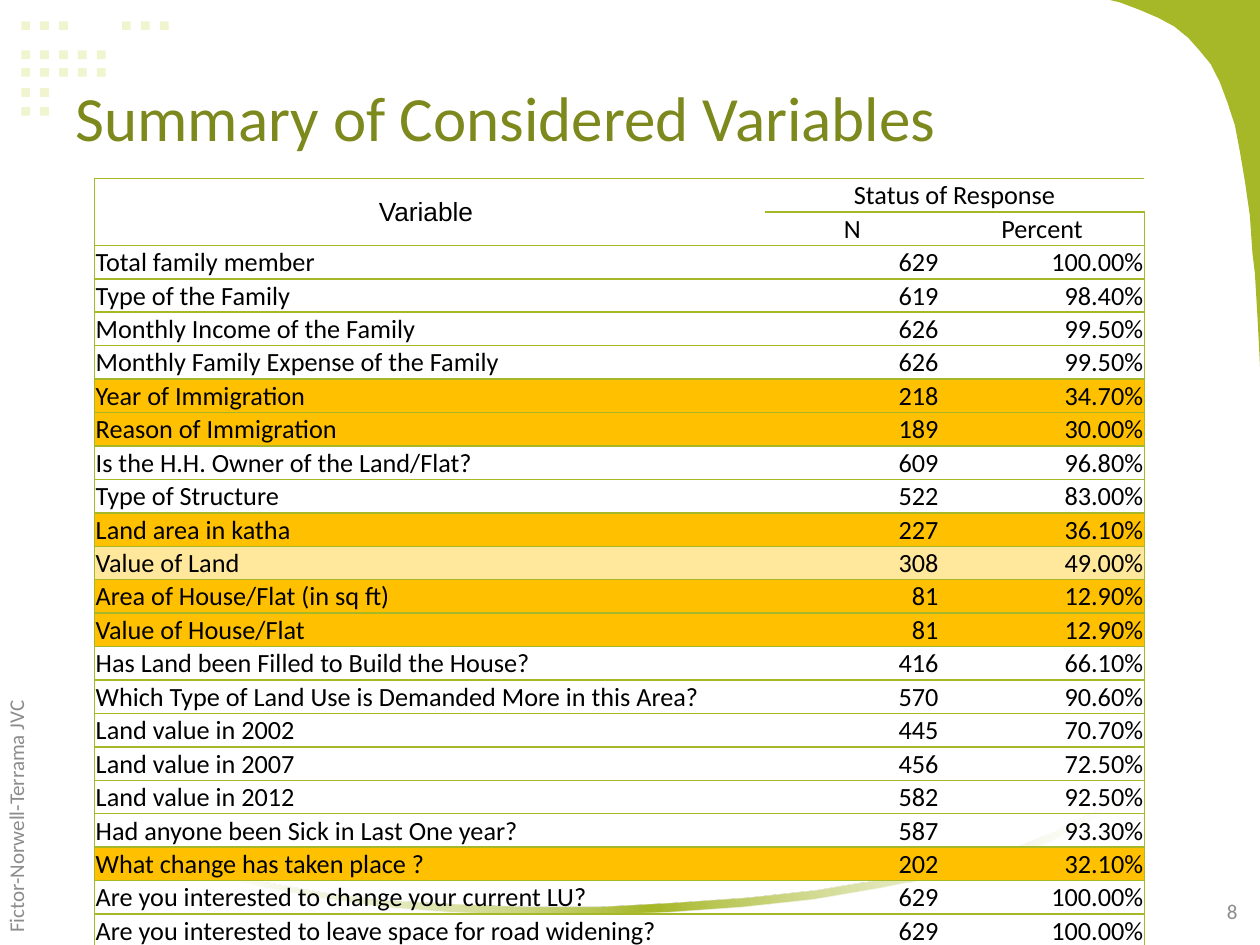
from pptx import Presentation
from pptx.dml.color import RGBColor
from pptx.enum.shapes import MSO_SHAPE
from pptx.enum.text import MSO_ANCHOR, PP_ALIGN
from pptx.oxml import parse_xml
from pptx.oxml.ns import nsdecls, qn
from pptx.util import Pt

GREEN = RGBColor(0xA6, 0xB7, 0x27)
PALE_GREEN = RGBColor(0xF0, 0xF5, 0xD0)
TITLE_GREEN = RGBColor(0x7D, 0x89, 0x1D)
ORANGE = RGBColor(0xFF, 0xC0, 0x00)
PALE_ORANGE = RGBColor(0xFF, 0xE7, 0x9B)
BLACK = RGBColor(0x00, 0x00, 0x00)
GREY = RGBColor(0x8C, 0x8C, 0x8C)

NO_STYLE_NO_GRID = "{2D5ABB26-0587-4C30-8999-92F81FD0307C}"
COLUMN_WIDTHS = (383, 100, 117)

# Label, count, percent, highlight
ROWS = [
    ("Total family member", 629, 100.0, None),
    ("Type of the Family", 619, 98.4, None),
    ("Monthly Income of the Family", 626, 99.5, None),
    ("Monthly Family Expense of the Family", 626, 99.5, None),
    ("Year of Immigration", 218, 34.7, ORANGE),
    ("Reason of Immigration", 189, 30.0, ORANGE),
    ("Is the H.H. Owner of the Land/Flat?", 609, 96.8, None),
    ("Type of Structure", 522, 83.0, None),
    ("Land area in katha", 227, 36.1, ORANGE),
    ("Value of Land", 308, 49.0, PALE_ORANGE),
    ("Area of House/Flat (in sq ft)", 81, 12.9, ORANGE),
    ("Value of House/Flat", 81, 12.9, ORANGE),
    ("Has Land been Filled to Build the House?", 416, 66.1, None),
    ("Which Type of Land Use is Demanded More in this Area?", 570, 90.6, None),
    ("Land value in 2002", 445, 70.7, None),
    ("Land value in 2007", 456, 72.5, None),
    ("Land value in 2012", 582, 92.5, None),
    ("Had anyone been Sick in Last One year?", 587, 93.3, None),
    ("What change has taken place ?", 202, 32.1, ORANGE),
    ("Are you interested to change your current LU?", 629, 100.0, None),
    ("Are you interested to leave space for road widening?", 629, 100.0, None),
]

# Top of each row of dots, with the columns that are filled
DOT_PITCH = 10.8
DOT_ROWS = [
    (12.2, (0, 1, 2, 5.33, 6.33, 7.33)),
    (28.8, range(5)),
    (38.9, range(5)),
    (50.4, range(2)),
    (61.2, range(2)),
]

CORNER = [
    (634.3, 0), (720, 0), (720, 209.5), (719.3, 195.1), (718.6, 181.4),
    (717.1, 156.2), (715.7, 144.7), (714.2, 123.1), (711.4, 103.7),
    (708.5, 86.4), (705.6, 71.3), (701.3, 58.3), (697, 46.8), (691.9, 36.7),
    (685.4, 28.8), (679, 21.6), (671, 15.1), (661.7, 10.1), (651.6, 5.8),
    (640.1, 1.4),
]
SWOOSH = [
    # Lower edge, right to left
    (642.2, 450), (642.2, 455), (624.2, 468), (601.2, 480.2), (572.4, 491),
    (540, 499.7), (504, 506.9), (465.1, 513.4), (424.1, 517.7),
    (382.3, 520.6), (339.8, 522), (298.1, 522), (257, 520.6), (218.9, 517.7),
    (183.6, 512.6), (151.2, 506.9), (123.8, 499.7), (102.2, 491),
    # Upper edge, left to right
    (102.2, 488.9), (124.6, 497.5), (152.6, 504), (185, 509.8),
    (221, 514.1), (259.9, 516.2), (300.2, 517.7), (342.7, 517.7),
    (384.5, 515.5), (427, 512.6), (467.3, 508.3), (506.2, 501.8),
    (542.2, 494.6), (574.6, 486), (602.6, 475.2), (625, 463.7),
]


def paint(shape, color):
    shape.shadow.inherit = False
    shape.fill.solid()
    shape.fill.fore_color.rgb = color
    shape.line.fill.background()


def style_text(paragraph, size, color, font="Calibri", align=PP_ALIGN.LEFT):
    paragraph.alignment = align
    for run in paragraph.runs:
        run.font.name = font
        run.font.size = Pt(size)
        run.font.color.rgb = color


def add_dots(slide):
    for top, columns in DOT_ROWS:
        for column in columns:
            dot = slide.shapes.add_shape(
                MSO_SHAPE.RECTANGLE, Pt(12.2 + column * DOT_PITCH), Pt(top), Pt(5), Pt(5))
            paint(dot, PALE_GREEN)


def add_outline(slide, points):
    start, *rest = [(Pt(x), Pt(y)) for x, y in points]
    builder = slide.shapes.build_freeform(*start)
    builder.add_line_segments(rest, close=True)
    shape = builder.convert_to_shape()
    paint(shape, GREEN)
    return shape


def fade_ends(shape):
    """Fade the fill to translucent white at the left and right ends."""
    shape.fill.gradient()
    shape.fill.gradient_angle = 0
    faded = '<a:srgbClr val="FFFFFF"><a:alpha val="30000"/></a:srgbClr>'
    stops = parse_xml(
        f'<a:gsLst {nsdecls("a")}><a:gs pos="0">{faded}</a:gs>'
        f'<a:gs pos="50000"><a:srgbClr val="{GREEN}"/></a:gs>'
        f'<a:gs pos="100000">{faded}</a:gs></a:gsLst>')
    old_stops = shape.element.spPr.find(qn("a:gradFill")).find(qn("a:gsLst"))
    old_stops.getparent().replace(old_stops, stops)


def set_title(slide, text):
    title = slide.shapes.title
    title.left, title.top, title.width, title.height = Pt(36), Pt(21.6), Pt(648), Pt(90)
    title.text_frame.text = text
    title.text_frame.vertical_anchor = MSO_ANCHOR.MIDDLE
    style_text(title.text_frame.paragraphs[0], 36, TITLE_GREEN)
    slide.shapes.element.append(title.element)  # in front of the decoration


def add_borders(cell, sides):
    properties = cell._tc.get_or_add_tcPr()
    for side in sides:
        properties.append(parse_xml(
            f'<a:ln{side} {nsdecls("a")} w="12700"><a:solidFill>'
            f'<a:srgbClr val="{GREEN}"/></a:solidFill></a:ln{side}>'))


def fill_cell(cell, text, align, highlight=None, font="Calibri", anchor=MSO_ANCHOR.BOTTOM):
    cell.text_frame.text = text
    style_text(cell.text_frame.paragraphs[0], 15, BLACK, font, align)
    cell.vertical_anchor = anchor
    cell.margin_left = cell.margin_right = cell.margin_top = Pt(0.72)
    cell.margin_bottom = 0
    if highlight:
        cell.fill.solid()
        cell.fill.fore_color.rgb = highlight
    else:
        cell.fill.background()


def add_variable_table(slide):
    frame = slide.shapes.add_table(
        len(ROWS) + 2, 3, Pt(54), Pt(102), Pt(600), Pt(431.25))
    table = frame.table
    table.first_row = table.horz_banding = False
    table._tbl.tblPr.find(qn("a:tableStyleId")).text = NO_STYLE_NO_GRID
    for column, width in zip(table.columns, COLUMN_WIDTHS):
        column.width = Pt(width)
    for row in table.rows:
        for cell, sides in zip(row.cells, ("LTB", "TB", "RTB")):
            add_borders(cell, sides)

    # Two header rows
    table.cell(0, 0).merge(table.cell(1, 0))
    table.cell(0, 1).merge(table.cell(0, 2))
    fill_cell(table.cell(0, 0), "Variable ", PP_ALIGN.CENTER,
              font="Arial", anchor=MSO_ANCHOR.MIDDLE)
    fill_cell(table.cell(0, 1), "Status of Response", PP_ALIGN.CENTER)
    for column, text in enumerate(("N", "Percent"), start=1):
        fill_cell(table.cell(1, column), text, PP_ALIGN.CENTER)

    # One row per variable
    for row, (label, count, percent, highlight) in enumerate(ROWS, start=2):
        fill_cell(table.cell(row, 0), label, PP_ALIGN.LEFT, highlight)
        for column, text in enumerate((str(count), f"{percent:.2f}%"), start=1):
            fill_cell(table.cell(row, column), text, PP_ALIGN.RIGHT, highlight)


def add_footer_text(slide, text, left, top, width, height, align, rotation=0):
    box = slide.shapes.add_textbox(Pt(left), Pt(top), Pt(width), Pt(height))
    box.rotation = rotation
    box.text_frame.word_wrap = True
    box.text_frame.vertical_anchor = MSO_ANCHOR.MIDDLE
    box.text_frame.text = text
    style_text(box.text_frame.paragraphs[0], 12, GREY, align=align)


def main():
    presentation = Presentation()
    presentation.slide_width, presentation.slide_height = Pt(720), Pt(540)
    slide = presentation.slides.add_slide(presentation.slide_layouts[5])

    # Decoration
    add_dots(slide)
    add_outline(slide, CORNER)
    fade_ends(add_outline(slide, SWOOSH))

    # Content
    set_title(slide, "Summary of Considered Variables")
    add_variable_table(slide)

    # Footer and page number
    add_footer_text(slide, "Fictor-Norwell-Terrama JVC", -105.1, 416.9, 228.2, 18,
                    PP_ALIGN.LEFT, rotation=270)
    add_footer_text(slide, "8", 684, 506.2, 30.2, 28.8, PP_ALIGN.RIGHT)

    presentation.save("out.pptx")


if __name__ == "__main__":
    main()
